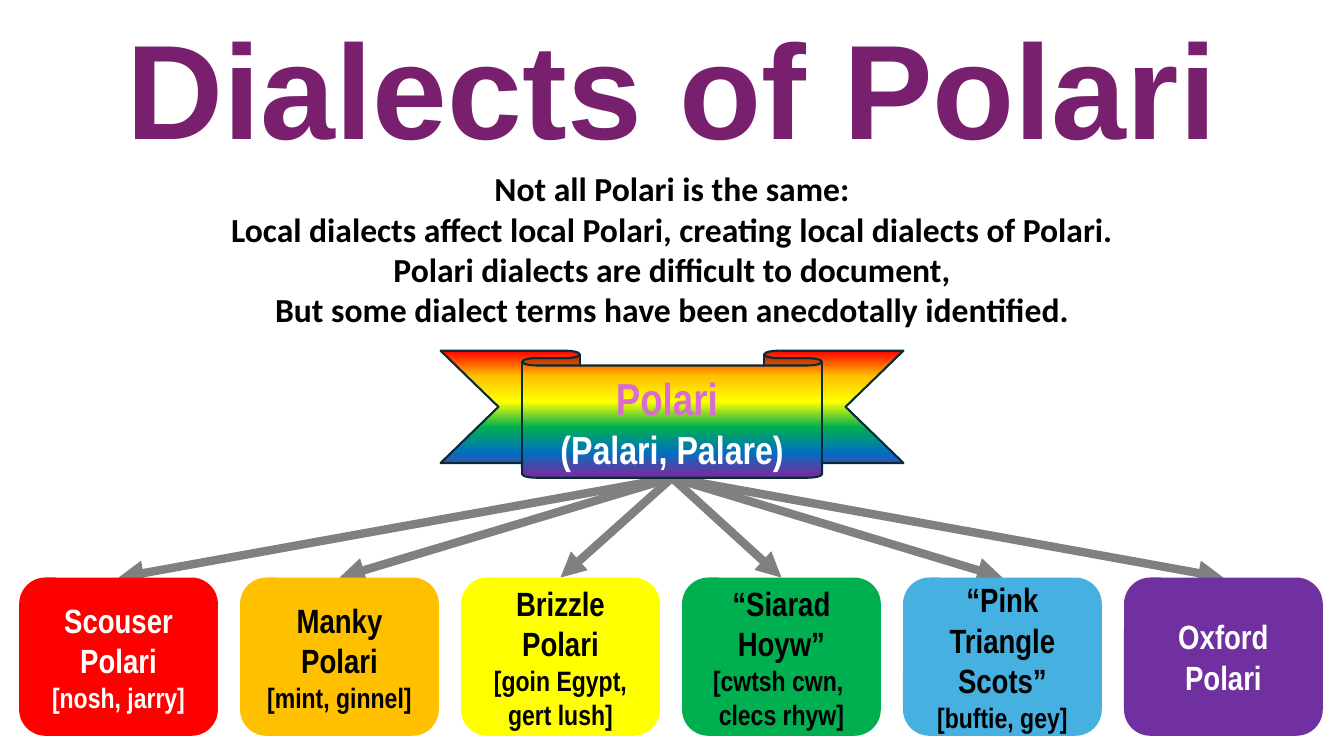
from dataclasses import dataclass
from lxml import etree
from pptx import Presentation
from pptx.dml.color import RGBColor
from pptx.enum.shapes import MSO_CONNECTOR, MSO_SHAPE
from pptx.enum.text import MSO_ANCHOR, MSO_AUTO_SIZE, PP_ALIGN
from pptx.oxml.ns import qn
from pptx.util import Inches, Pt


@dataclass(frozen=True)
class Theme:
    heading_font: str = "Arial"
    body_font: str = "Calibri"
    label_font: str = "Arial Narrow"
    heading_size: int = 96
    intro_size: int = 24
    banner_size: int = 32
    variants_size: int = 28
    dialect_size: int = 24
    terms_size: int = 20
    heading: str = "78206E"
    heading_outline: str = "FFFF00"
    intro_outline: str = "DCEAF7"
    banner: str = "D86ECC"
    banner_line: str = "092A39"
    arrow: str = "808080"
    dark: str = "000000"
    light: str = "FFFFFF"
    rainbow: tuple = ((0, "FF0000"), (20, "FFC000"), (40, "FFFF00"),
                      (60, "00B050"), (80, "0070C0"), (97, "7030A0"))


@dataclass(frozen=True)
class Box:
    left: float
    top: float
    width: float
    height: float

    def emu(self):
        return [Inches(v) for v in (self.left, self.top, self.width, self.height)]

    def column(self, index, count, gap):
        width = (self.width - gap * (count - 1)) / count
        return Box(self.left + index * (width + gap), self.top, width, self.height)


THEME = Theme()
WIDTH, HEIGHT = 13.33, 7.5
HEADING_BOX = Box(0, 0, WIDTH, 1.72)
INTRO_BOX = Box(0.97, 1.62, 11.39, 1.72)
BANNER_BOX = Box(4.37, 3.48, 4.59, 1.26)
DIALECT_ROW = Box(0.19, 5.73, 12.93, 1.57)
DIALECT_GAP = 0.22

INTRO = [
    "Not all Polari is the same:",
    "Local dialects affect local Polari, creating local dialects of Polari.",
    "Polari dialects are difficult to document,",
    "But some dialect terms have been anecdotally identified.",
]
DIALECTS = [
    ("Scouser Polari", ["[nosh, jarry]"], "FF0000", THEME.light),
    ("Manky Polari", ["[mint, ginnel]"], "FFC000", THEME.dark),
    ("Brizzle Polari", ["[goin Egypt,", "gert lush]"], "FFFF00", THEME.dark),
    ("“Siarad Hoyw”", ["[cwtsh cwn, ", "clecs rhyw]"], "00B050", THEME.dark),
    ("“Pink Triangle Scots”", ["[buftie, gey]"], "46B1E1", THEME.dark),
    ("Oxford Polari", [], "7030A0", THEME.light),
]


def rgb(value):
    return RGBColor.from_string(value)


def outline_run(run, color, width):
    line = etree.Element(qn("a:ln"), w=str(Pt(width)))
    fill = etree.SubElement(line, qn("a:solidFill"))
    etree.SubElement(fill, qn("a:srgbClr"), val=color)
    run.font._element.insert(0, line)


def write_lines(frame, lines, font, outline=None):
    frame.word_wrap = True
    for index, (text, size, color) in enumerate(lines):
        paragraph = frame.add_paragraph() if index else frame.paragraphs[0]
        paragraph.alignment = PP_ALIGN.CENTER
        run = paragraph.add_run()
        run.text = text
        run.font.name = font
        run.font.size = Pt(size)
        run.font.bold = True
        run.font.color.rgb = rgb(color)
        if outline:
            outline_run(run, *outline)


def add_caption(slide, box, lines, font, outline):
    frame = slide.shapes.add_textbox(*box.emu()).text_frame
    write_lines(frame, lines, font, outline)
    frame.auto_size = MSO_AUTO_SIZE.SHAPE_TO_FIT_TEXT


def add_label(slide, kind, box, lines):
    label = slide.shapes.add_shape(kind, *box.emu())
    label.shadow.inherit = False
    label.text_frame.vertical_anchor = MSO_ANCHOR.MIDDLE
    write_lines(label.text_frame, lines, THEME.label_font)
    return label


def add_banner(slide, box):
    banner = add_label(slide, MSO_SHAPE.DOWN_RIBBON, box, [
        ("Polari ", THEME.banner_size, THEME.banner),
        ("(Palari, Palare)", THEME.variants_size, THEME.light),
    ])
    banner.adjustments[0] = 0.116
    banner.adjustments[1] = 0.648
    banner.fill.gradient()
    banner.fill.gradient_angle = 270
    stops = banner._element.spPr.find(".//" + qn("a:gsLst"))
    for stop in list(stops):
        stops.remove(stop)
    for percent, color in THEME.rainbow:
        stop = etree.SubElement(stops, qn("a:gs"), pos=str(percent * 1000))
        etree.SubElement(stop, qn("a:srgbClr"), val=color)
    banner.line.color.rgb = rgb(THEME.banner_line)
    banner.line.width = Pt(1.5)
    return banner


def add_dialect(slide, box, name, terms, fill, color):
    lines = [(name, THEME.dialect_size, color)]
    lines += [(term, THEME.terms_size, color) for term in terms]
    dialect = add_label(slide, MSO_SHAPE.FLOWCHART_ALTERNATE_PROCESS, box, lines)
    dialect.fill.solid()
    dialect.fill.fore_color.rgb = rgb(fill)
    dialect.line.fill.background()
    return dialect


def add_arrow(slide):
    arrow = slide.shapes.add_connector(MSO_CONNECTOR.STRAIGHT, 0, 0, 0, 0)
    arrow.line.color.rgb = rgb(THEME.arrow)
    arrow.line.width = Pt(6)
    etree.SubElement(arrow.line._get_or_add_ln(), qn("a:tailEnd"), type="triangle")
    etree.SubElement(arrow._element.spPr, qn("a:effectLst"))
    return arrow


def add_family_tree(slide, banner_box, row):
    arrows = [add_arrow(slide) for _ in DIALECTS]
    banner = add_banner(slide, banner_box)
    for index, (arrow, details) in enumerate(zip(arrows, DIALECTS)):
        box = row.column(index, len(DIALECTS), DIALECT_GAP)
        dialect = add_dialect(slide, box, *details)
        arrow.begin_connect(banner, 2)
        arrow.end_connect(dialect, 0)


def main():
    deck = Presentation()
    deck.slide_width, deck.slide_height = Inches(WIDTH), Inches(HEIGHT)
    slide = deck.slides.add_slide(deck.slide_layouts[6])
    add_family_tree(slide, BANNER_BOX, DIALECT_ROW)
    add_caption(slide, HEADING_BOX,
                [("Dialects of Polari", THEME.heading_size, THEME.heading)],
                THEME.heading_font, (THEME.heading_outline, 1.5))
    add_caption(slide, INTRO_BOX,
                [(line, THEME.intro_size, THEME.dark) for line in INTRO],
                THEME.body_font, (THEME.intro_outline, 0.75))
    deck.save("out.pptx")


if __name__ == "__main__":
    main()
